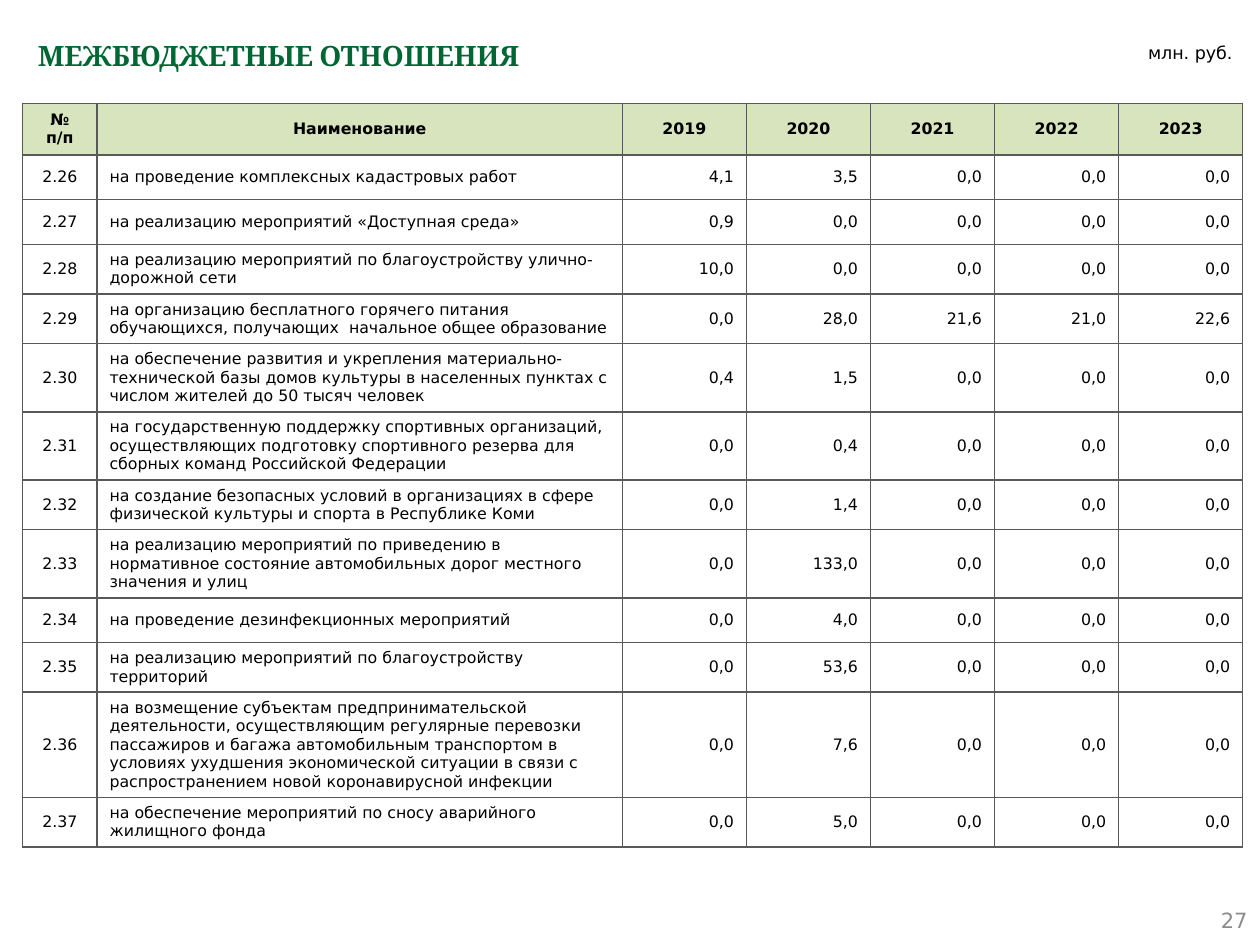
"""Build the slide with the table of inter-budget transfers."""
from dataclasses import dataclass
from typing import NamedTuple

from lxml import etree
from pptx import Presentation
from pptx.dml.color import RGBColor
from pptx.enum import shapes, text
from pptx.oxml import ns
from pptx.util import Inches, Pt


@dataclass(frozen=True)
class Theme:
    """Colours, fonts and type sizes of the slide."""
    green: str = "006633"
    ink: str = "000000"
    muted: str = "8C8C8C"
    header: str = "D7E4BD"
    border: str = "595959"
    serif: str = "Cambria"
    sans: str = "DejaVu Sans"
    title_size: float = 16
    page_size: float = 12
    unit_size: float = 10
    table_size: float = 9


class Box(NamedTuple):
    """Position and size in inches."""
    left: float
    top: float
    width: float
    height: float

    def lengths(self) -> list:
        """Return the four values as lengths."""
        return [Inches(v) for v in self]


class Entry(NamedTuple):
    """One budget line with its yearly amounts and row height."""
    number: str
    name: str
    amounts: str
    height: float = 0.39


THEME = Theme()
LEFT, CENTER, RIGHT = (text.PP_ALIGN.LEFT, text.PP_ALIGN.CENTER, text.PP_ALIGN.RIGHT)
TOP, MIDDLE = text.MSO_ANCHOR.TOP, text.MSO_ANCHOR.MIDDLE

YEARS = ["2019", "2020", "2021", "2022", "2023"]
HEADER = ["№ п/п", "Наименование", *YEARS]
HEADER_HEIGHT = 0.41
COLUMNS = [0.59, 4.17] + [0.985] * len(YEARS)
ALIGNS = [CENTER, LEFT] + [RIGHT] * len(YEARS)
ENTRIES = [
    Entry("2.26", "на проведение комплексных кадастровых работ", "4,1 3,5 0,0 0,0 0,0", 0.355),
    Entry("2.27", "на реализацию мероприятий «Доступная среда»", "0,9 0,0 0,0 0,0 0,0", 0.355),
    Entry("2.28", "на реализацию мероприятий по благоустройству улично-дорожной сети",
          "10,0 0,0 0,0 0,0 0,0"),
    Entry("2.29", "на организацию бесплатного горячего питания обучающихся, "
          "получающих  начальное общее образование", "0,0 28,0 21,6 21,0 22,6"),
    Entry("2.30", "на обеспечение развития и укрепления материально-технической базы домов "
          "культуры в населенных пунктах с числом жителей до 50 тысяч человек",
          "0,4 1,5 0,0 0,0 0,0"),
    Entry("2.31", "на государственную поддержку спортивных организаций, осуществляющих "
          "подготовку спортивного резерва для сборных команд Российской Федерации",
          "0,0 0,4 0,0 0,0 0,0"),
    Entry("2.32", "на создание безопасных условий в организациях в сфере физической культуры "
          "и спорта в Республике Коми", "0,0 1,4 0,0 0,0 0,0"),
    Entry("2.33", "на реализацию мероприятий по приведению в нормативное состояние "
          "автомобильных дорог местного значения и улиц", "0,0 133,0 0,0 0,0 0,0"),
    Entry("2.34", "на проведение дезинфекционных мероприятий", "0,0 4,0 0,0 0,0 0,0", 0.355),
    Entry("2.35", "на реализацию мероприятий по благоустройству территорий",
          "0,0 53,6 0,0 0,0 0,0"),
    Entry("2.36", "на возмещение субъектам предпринимательской деятельности, осуществляющим "
          "регулярные перевозки пассажиров и багажа автомобильным транспортом в условиях "
          "ухудшения экономической ситуации в связи с распространением новой "
          "коронавирусной инфекции", "0,0 7,6 0,0 0,0 0,0"),
    Entry("2.37", "на обеспечение мероприятий по сносу аварийного жилищного фонда",
          "0,0 5,0 0,0 0,0 0,0"),
]


def write(tf, content: str, color: str, align, **font) -> None:
    """Fill a text frame with one formatted paragraph."""
    p = tf.paragraphs[0]
    p.alignment = align
    r = p.add_run()
    r.text = content
    r.font.color.rgb = RGBColor.from_string(color)
    for key, value in font.items():
        setattr(r.font, key, value)


def set_frame(tf, anchor) -> None:
    """Set wrapping, anchor and zero vertical insets of a text frame."""
    frame = {"word_wrap": True, "auto_size": text.MSO_AUTO_SIZE.NONE,
             "vertical_anchor": anchor, "margin_top": 0, "margin_bottom": 0}
    for key, value in frame.items():
        setattr(tf, key, value)


def add_title(s, box: Box, content: str) -> None:
    """Place the heading in the title placeholder."""
    sp = s.shapes.title
    sp.left, sp.top, sp.width, sp.height = box.lengths()
    tf = sp.text_frame
    set_frame(tf, TOP)
    tf.margin_top = Inches(0.05)
    tf.paragraphs[0].line_spacing = 1.2
    write(tf, content, THEME.green, LEFT, name=THEME.serif,
          size=Pt(THEME.title_size), bold=True)


def add_unit(s, box: Box, content: str) -> None:
    """Add the unit label above the table."""
    sp = s.shapes.add_shape(shapes.MSO_SHAPE.PENTAGON, *box.lengths())
    sp.adjustments[0] = 0
    sp.shadow.inherit = False
    sp.fill.background()
    sp.line.fill.background()
    set_frame(sp.text_frame, MIDDLE)
    write(sp.text_frame, content, THEME.ink, RIGHT, name=THEME.sans, size=Pt(THEME.unit_size))


def add_page_number(s, box: Box, content: str) -> None:
    """Add the page number in the bottom corner."""
    tf = s.shapes.add_textbox(*box.lengths()).text_frame
    set_frame(tf, MIDDLE)
    write(tf, content, THEME.muted, RIGHT, name=THEME.sans, size=Pt(THEME.page_size))


def set_borders(cell) -> None:
    """Draw a thin line on every side of a cell."""
    props = cell._tc.get_or_add_tcPr()
    for side in ("a:lnL", "a:lnR", "a:lnT", "a:lnB"):
        line = etree.SubElement(props, ns.qn(side), w=str(Pt(1)))
        fill = etree.SubElement(line, ns.qn("a:solidFill"))
        etree.SubElement(fill, ns.qn("a:srgbClr"), val=THEME.border)


def fill_cell(cell, content: str, align, is_header: bool) -> None:
    """Write and format one table cell."""
    cell.vertical_anchor = MIDDLE
    set_borders(cell)
    if is_header:
        cell.fill.solid()
        cell.fill.fore_color.rgb = RGBColor.from_string(THEME.header)
    else:
        cell.fill.background()
    write(cell.text_frame, content, THEME.ink, CENTER if is_header else align,
          name=THEME.sans, size=Pt(THEME.table_size), bold=is_header)


def add_budget_table(s, left: float, top: float) -> None:
    """Add the table of transfers by year."""
    rows = [HEADER] + [[e.number, e.name, *e.amounts.split()] for e in ENTRIES]
    heights = [HEADER_HEIGHT] + [e.height for e in ENTRIES]
    box = Box(left, top, sum(COLUMNS), sum(heights))
    table = s.shapes.add_table(len(rows), len(COLUMNS), *box.lengths()).table
    table.first_row = table.horz_banding = False
    for column, width in zip(table.columns, COLUMNS):
        column.width = Inches(width)
    for i, (row, height) in enumerate(zip(rows, heights)):
        table.rows[i].height = Inches(height)
        for j, (content, align) in enumerate(zip(row, ALIGNS)):
            fill_cell(table.cell(i, j), content, align, i == 0)


def main() -> None:
    """Build and save the presentation."""
    prs = Presentation()
    prs.slide_width, prs.slide_height = Inches(10), Inches(7.5)
    s = prs.slides.add_slide(prs.slide_layouts[5])
    add_title(s, Box(0.2, 0.2, 9.61, 0.79), "МЕЖБЮДЖЕТНЫЕ ОТНОШЕНИЯ")
    add_page_number(s, Box(7.67, 7.1, 2.33, 0.4), "27")
    add_unit(s, Box(8.64, 0.31, 1.24, 0.21), "млн. руб.")
    add_budget_table(s, 0.18, 0.82)
    prs.save("out.pptx")


if __name__ == "__main__":
    main()
